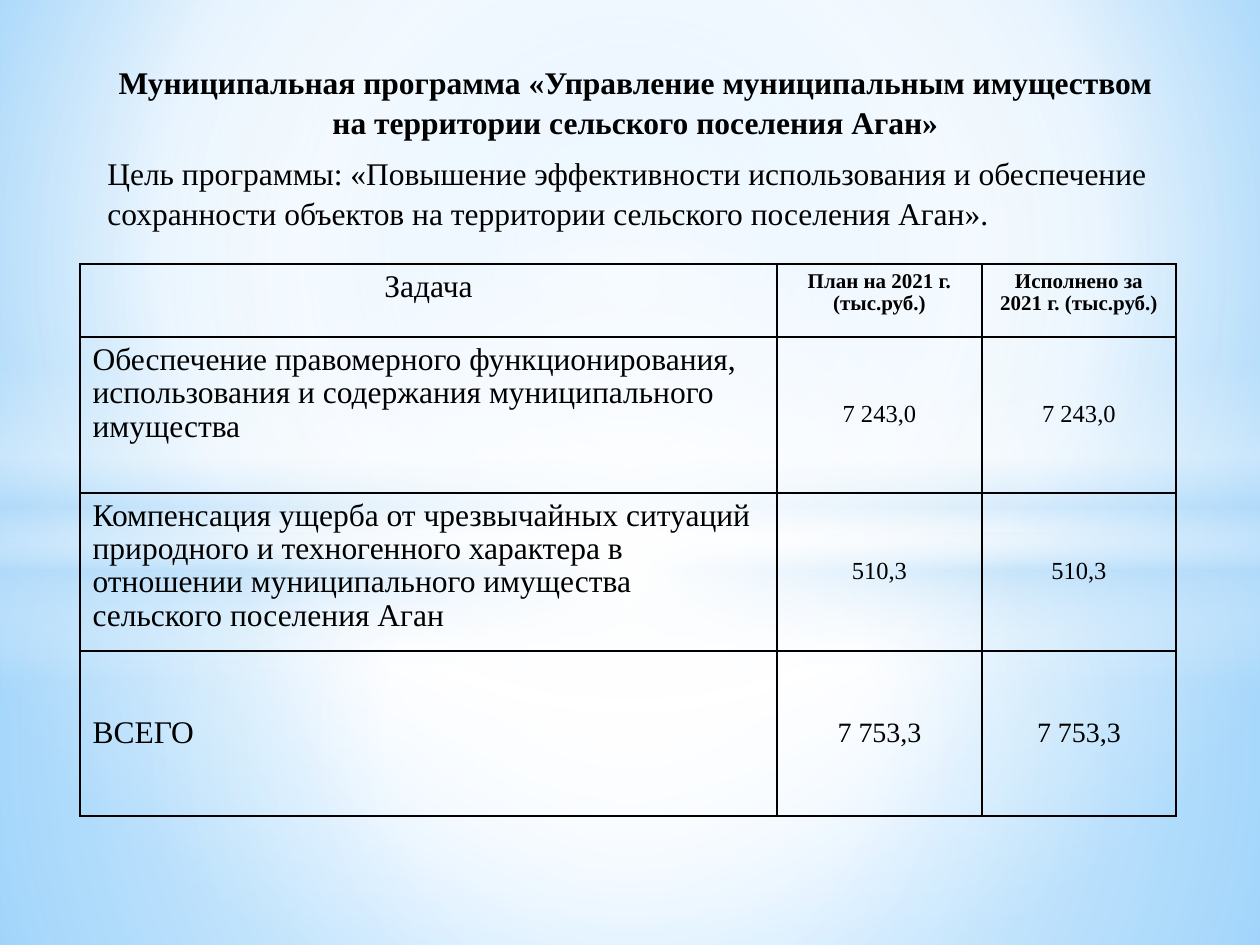
from dataclasses import dataclass

from lxml.etree import SubElement
from pptx import Presentation
from pptx.dml.color import RGBColor
from pptx.enum.shapes import MSO_SHAPE
from pptx.enum.text import MSO_ANCHOR, PP_ALIGN
from pptx.oxml.ns import qn
from pptx.util import Emu, Pt

SCALE = 914400 / 126
PAGE_WIDTH, PAGE_HEIGHT = 1260, 945


@dataclass(frozen=True)
class Theme:
    """Colours, font and type sizes of the slide."""
    font: str = "Times New Roman"
    ink: str = "000000"
    white: str = "FFFFFF"
    pale: str = "B4DCFA"
    sky: str = "9ED5FF"
    blue: str = "5BB9FF"
    body: int = 18
    total: int = 16
    value: int = 14
    heading: int = 12


THEME = Theme()


def px(length):
    """Turn pixels into EMU."""
    return Emu(round(length * SCALE))


def set_gradient(owner, fill, stops, focus=None):
    """Fill with (position, colour, opacity) stops, round a focus or downwards."""
    fill.gradient()
    gradient = owner.element.find(".//" + qn("a:gradFill"))
    for child in list(gradient):
        gradient.remove(child)
    gradient.set("rotWithShape", "1")
    stop_list = SubElement(gradient, qn("a:gsLst"))
    for position, colour, opacity in stops:
        stop = SubElement(stop_list, qn("a:gs"), pos=str(position * 1000))
        tint = SubElement(stop, qn("a:srgbClr"), val=colour)
        if opacity < 100:
            SubElement(tint, qn("a:alpha"), val=str(opacity * 1000))
    if focus:
        circle = SubElement(gradient, qn("a:path"), path="circle")
        sides = {side: str(share * 1000) for side, share in zip("ltrb", focus)}
        SubElement(circle, qn("a:fillToRect"), **sides)
    else:
        SubElement(gradient, qn("a:lin"), ang="5400000", scaled="0")


def add_glow(page, box, kind, stops, focus=None):
    """Add a borderless gradient shape in the box."""
    glow = page.shapes.add_shape(kind, *map(px, box))
    glow.shadow.inherit = False
    glow.line.fill.background()
    set_gradient(glow, glow.fill, stops, focus)


def add_backdrop(page, box):
    """Paint the page background and its layers of light."""
    left, top, width, height = box
    horizon = top + 533
    centre = (50, 50, 50, 50)
    white, pale = THEME.white, THEME.pale
    set_gradient(page, page.background.fill,
                 [(0, THEME.sky, 100), (60, white, 100), (100, THEME.blue, 100)],
                 (20, 10, 20, 60))
    add_glow(page, (left, horizon, width, top + height - horizon), MSO_SHAPE.RECTANGLE,
             [(0, white, 91), (37, white, 76), (100, pale, 79)], centre)
    add_glow(page, (left, top, width, horizon - top), MSO_SHAPE.RECTANGLE,
             [(0, white, 89), (48, white, 62), (100, pale, 79)], centre)
    add_glow(page, (left, top + 365, width, 315), MSO_SHAPE.RECTANGLE,
             [(0, white, 0), (29, white, 30), (45, pale, 40),
              (55, white, 26), (65, pale, 60), (100, white, 0)])
    add_glow(page, (left, top + 221, width, 703), MSO_SHAPE.OVAL,
             [(0, white, 100), (54, white, 0)], centre)


def write_lines(frame, lines, size, align, bold=False, spacing=1.0):
    """Write each line as a paragraph and return the paragraphs."""
    for number, line in enumerate(lines):
        para = frame.paragraphs[0] if number == 0 else frame.add_paragraph()
        para.text = line
        para.alignment = align
        para.line_spacing = spacing
        para.font.name = THEME.font
        para.font.size = Pt(size)
        para.font.bold = bold
        para.font.color.rgb = RGBColor.from_string(THEME.ink)
    return frame.paragraphs


def add_intro(page, box):
    """Add the programme title and its goal."""
    frame = page.shapes.add_textbox(*map(px, box)).text_frame
    frame.word_wrap = True
    title, goal = write_lines(frame, [
        "Муниципальная программа «Управление муниципальным имуществом "
        "на территории сельского поселения Аган»",
        "Цель программы: «Повышение эффективности использования и обеспечение "
        "сохранности объектов на территории сельского поселения Аган».",
    ], THEME.body, PP_ALIGN.LEFT, spacing=1.05)
    title.alignment = PP_ALIGN.CENTER
    title.font.bold = True
    for para in (title, goal):
        para.space_before = Pt(3.6)
        para.space_after = Pt(3)


def style_cell(cell):
    """Clear the cell's fill and rule its four sides."""
    cell.fill.background()
    properties = cell._tc.get_or_add_tcPr()
    for index, side in enumerate(("lnL", "lnR", "lnT", "lnB")):
        line = SubElement(properties, qn("a:" + side), w=str(Pt(1)))
        solid = SubElement(line, qn("a:solidFill"))
        SubElement(solid, qn("a:srgbClr"), val=THEME.ink)
        properties.insert(index, line)


def add_budget_table(page, box):
    """Add the table of tasks with planned and spent sums."""
    rows = [
        (["Задача"], ["План на 2021 г.", "(тыс.руб.)"],
         ["Исполнено за", "2021 г. (тыс.руб.)"]),
        (["Обеспечение правомерного функционирования, использования и содержания "
          "муниципального имущества"], ["7 243,0"], ["7 243,0"]),
        (["Компенсация ущерба от чрезвычайных ситуаций природного и техногенного "
          "характера в отношении муниципального имущества сельского поселения Аган"],
         ["510,3"], ["510,3"]),
        (["ВСЕГО"], ["7 753,3"], ["7 753,3"]),
    ]
    sum_sizes = [THEME.heading, THEME.value, THEME.value, THEME.total]
    table = page.shapes.add_table(len(rows), 3, *map(px, box)).table
    table.first_row = table.horz_banding = False
    for column, width in zip(table.columns, (697, 205, 194)):
        column.width = px(width)
    for row, height in zip(table.rows, (73, 156, 137, 165)):
        row.height = px(height)
    last = len(rows) - 1
    for row_number, row in enumerate(rows):
        for column_number, lines in enumerate(row):
            cell = table.cell(row_number, column_number)
            is_header, is_sum = row_number == 0, column_number > 0
            style_cell(cell)
            if row_number == last or (is_sum and not is_header):
                cell.vertical_anchor = MSO_ANCHOR.MIDDLE
            write_lines(cell.text_frame, lines,
                        sum_sizes[row_number] if is_sum else THEME.body,
                        PP_ALIGN.CENTER if is_header or is_sum else PP_ALIGN.LEFT,
                        bold=is_header and is_sum, spacing=0.96)


def main():
    """Build and save the slide."""
    deck = Presentation()
    deck.slide_width, deck.slide_height = px(PAGE_WIDTH), px(PAGE_HEIGHT)
    page = deck.slides.add_slide(deck.slide_layouts[6])
    add_backdrop(page, (0, 0, PAGE_WIDTH, PAGE_HEIGHT))
    add_intro(page, (95, 55, 1081, 843))
    add_budget_table(page, (80, 264, 1096, 531))
    deck.save("out.pptx")


if __name__ == "__main__":
    main()
